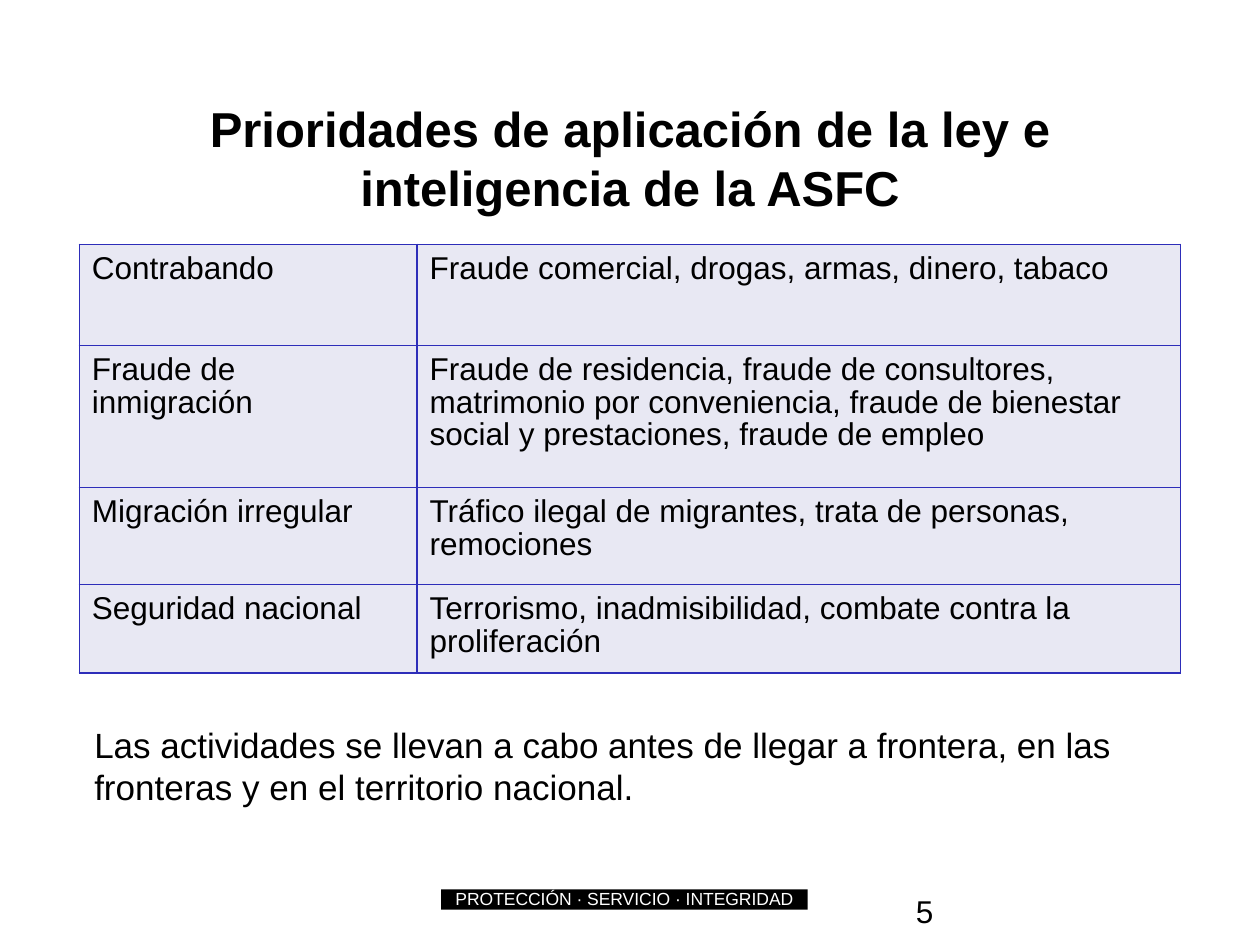
from pptx import Presentation
from pptx.dml.color import RGBColor
from pptx.enum.shapes import MSO_SHAPE as Shape
from pptx.enum.text import MSO_ANCHOR as Anchor, MSO_AUTO_SIZE as AutoSize, PP_ALIGN as Align
from pptx.oxml import parse_xml
from pptx.oxml.ns import nsdecls
from pptx.util import Inches, Pt

BLACK, WHITE, PALE, BLUE = "000000", "FFFFFF", "E8E8F3", "2D2DB9"
PRIORITIES = [
    ("Contrabando", "Fraude comercial, drogas, armas, dinero, tabaco"),
    ("Fraude de inmigración",
     "Fraude de residencia, fraude de consultores, matrimonio por conveniencia, "
     "fraude de bienestar social y prestaciones, fraude de empleo"),
    ("Migración irregular", "Tráfico ilegal de migrantes, trata de personas, remociones"),
    ("Seguridad nacional", "Terrorismo, inadmisibilidad, combate contra la proliferación"),
]


def colour(value):
    return RGBColor.from_string(value)


def assign(target, values):
    for name, value in values.items():
        setattr(target, name, value)


class SlideBuilder:
    """Style and current slide; lengths are cells of a grid of 100 columns by 75 rows."""
    font_name = "Arial"
    line_spacing = 0.93

    def __init__(self, deck):
        self.page = deck.slides.add_slide(deck.slide_layouts[5])
        self.unit = deck.slide_width / 100

    def grid(self, *cells):
        return [round(cell * self.unit) for cell in cells]

    def fill_text(self, frame, text, size, hue=BLACK, bold=False, top=0.1, **layout):
        assign(frame, dict(word_wrap=True, margin_left=Inches(0.1), margin_right=Inches(0.1),
                           margin_top=Inches(top), margin_bottom=Inches(0.05)))
        para = frame.paragraphs[0]
        assign(para, layout)
        span = para.add_run()
        span.text = text
        assign(span.font, dict(name=self.font_name, size=Pt(size), bold=bold))
        span.font.color.rgb = colour(hue)
        return para

    def title(self, text, *place):
        box = self.page.shapes.title
        assign(box, dict(zip(("left", "top", "width", "height"), self.grid(*place))))
        assign(box.text_frame, dict(auto_size=AutoSize.NONE, vertical_anchor=Anchor.TOP))
        self.fill_text(box.text_frame, text, 28, bold=True, alignment=Align.CENTER)

    def text(self, text, size, *place, **layout):
        box = self.page.shapes.add_textbox(*self.grid(*place))
        return self.fill_text(box.text_frame, text, size, **layout)

    def banner(self, text, *place):
        bar = self.page.shapes.add_shape(Shape.RECTANGLE, *self.grid(*place))
        bar.shadow.inherit = False
        bar.fill.solid()
        bar.fill.fore_color.rgb = colour(BLACK)
        bar.line.fill.background()
        bar.text_frame.vertical_anchor = Anchor.MIDDLE
        self.fill_text(bar.text_frame, text, 10, WHITE, top=0.05,
                       alignment=Align.CENTER, line_spacing=self.line_spacing)

    def table(self, rows, left, top, widths, heights):
        place = self.grid(left, top, sum(widths), sum(heights))
        table = self.page.shapes.add_table(len(rows), len(widths), *place).table
        assign(table, dict(first_row=False, horz_banding=False))
        for column, width in zip(table.columns, self.grid(*widths)):
            column.width = width
        for row, height, texts in zip(table.rows, self.grid(*heights), rows):
            row.height = height
            for cell, text in zip(row.cells, texts):
                self.cell(cell, text)

    def cell(self, cell, text):
        self.fill_text(cell.text_frame, text, 18, line_spacing=self.line_spacing)
        assign(cell, dict(margin_left=Inches(0.1), margin_right=Inches(0.1),
                          margin_top=Inches(0.07), margin_bottom=Inches(0.05)))
        # Borders come before the fill in the cell properties
        properties = cell._tc.get_or_add_tcPr()
        for side in ("lnL", "lnR", "lnT", "lnB"):
            properties.append(parse_xml(
                f'<a:{side} {nsdecls("a")} w="{Pt(1)}"><a:solidFill>'
                f'<a:srgbClr val="{BLUE}"/></a:solidFill></a:{side}>'))
        cell.fill.solid()
        cell.fill.fore_color.rgb = colour(PALE)


def main():
    deck = Presentation()
    assign(deck, dict(slide_width=Inches(10), slide_height=Inches(7.5)))
    slide = SlideBuilder(deck)

    # Heading
    slide.title("Prioridades de aplicación de la ley e inteligencia de la ASFC", 5, 6.8, 90, 10.2)

    # Closing remark, indented as a whole
    remark = slide.text("Las actividades se llevan a cabo antes de llegar a frontera, en las "
                        "fronteras y en el territorio nacional.", 20, 5.3, 56.4, 90, 8.6,
                        space_after=Pt(14.2))
    remark._p.get_or_add_pPr().set("marL", str(Inches(0.12)))

    # Page number
    slide.text("5", 18, 71.7, 69.8, 23.3, 5.2)

    # Priorities
    slide.table(PRIORITIES, 6.3, 19.4, widths=(26.8, 60.6), heights=(8, 11.3, 7.7, 7))

    # Footer motto
    slide.banner("PROTECCIÓN · SERVICIO · INTEGRIDAD", 35, 70.6, 29.1, 1.6)

    deck.save("out.pptx")


if __name__ == "__main__":
    main()
